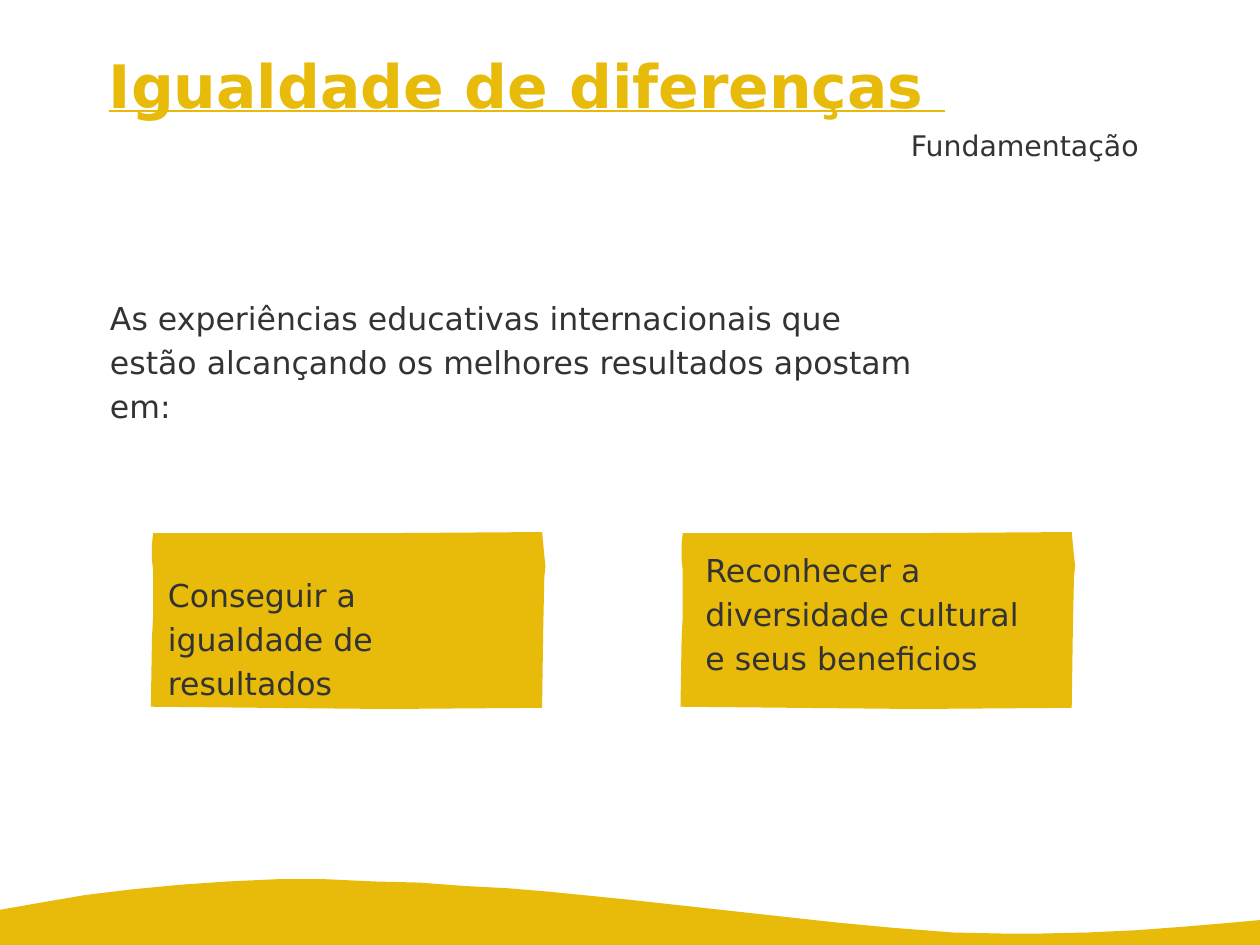
from dataclasses import dataclass

import pptx
import pptx.dml.color
import pptx.enum.text
import pptx.util
from pptx.util import Inches

ALIGN = pptx.enum.text.PP_ALIGN


@dataclass(frozen=True)
class Theme:
    font: str = "DejaVu Sans"
    gold: str = "E8BA0A"
    ink: str = "333333"
    title_size: int = 38
    body_size: int = 20
    label_size: int = 18
    body_spacing: float = 1.17


THEME = Theme()

# Outlines in hundredths of an inch
CARD = [(2, 1), (1, 11), (1, 25), (2, 33), (2, 74), (1, 94), (0, 154),
        (207, 156), (345, 155), (346, 86), (347, 39), (348, 30),
        (347, 21), (345, 0), (203, 1)]
WAVE = [(0, 27), (34, 21), (75, 14), (116, 9), (158, 5), (201, 2), (244, 0),
        (287, 0), (330, 2), (370, 3), (410, 6), (448, 8), (484, 11),
        (554, 18), (736, 38), (789, 43), (815, 45), (840, 47), (889, 48),
        (913, 48), (959, 47), (1002, 45), (1042, 42), (1078, 39),
        (1111, 36), (1111, 58), (0, 58)]


def write(frame, text, *, size=THEME.body_size, color=THEME.ink, bold=False,
          underline=False, align=ALIGN.LEFT, spacing=None, inset=0):
    """Fill a text frame with one formatted paragraph."""
    frame.word_wrap = True
    frame.auto_size = pptx.enum.text.MSO_AUTO_SIZE.NONE
    frame.vertical_anchor = pptx.enum.text.MSO_ANCHOR.TOP
    frame.margin_left = frame.margin_right = Inches(inset)
    frame.margin_top = frame.margin_bottom = Inches(inset / 2)
    paragraph = frame.paragraphs[0]
    paragraph.alignment = align
    paragraph.line_spacing = spacing
    run = paragraph.add_run()
    run.text = text
    run.font.name = THEME.font
    run.font.size = pptx.util.Pt(size)
    run.font.bold = bold
    run.font.underline = underline
    run.font.color.rgb = pptx.dml.color.RGBColor.from_string(color)


def add_text(slide, left, top, width, height, text, **style):
    box = slide.shapes.add_textbox(Inches(left), Inches(top),
                                   Inches(width), Inches(height))
    write(box.text_frame, text, **style)


def add_outline(slide, points, left, top):
    """Draw a gold freeform whose points are relative to left, top."""
    builder = slide.shapes.build_freeform(*points[0], scale=Inches(0.01))
    builder.add_line_segments(points[1:], close=True)
    outline = builder.convert_to_shape(Inches(left), Inches(top))
    outline.shadow.inherit = False
    outline.fill.solid()
    outline.fill.fore_color.rgb = pptx.dml.color.RGBColor.from_string(THEME.gold)
    outline.line.fill.background()


def add_title(slide, text):
    title = slide.shapes.title
    title.left, title.top = Inches(0.96), Inches(0.45)
    title.width, title.height = Inches(9.19), Inches(0.88)
    write(title.text_frame, text, size=THEME.title_size, color=THEME.gold,
          bold=True, underline=True, spacing=pptx.util.Pt(44.1))


def main():
    deck = pptx.Presentation()
    deck.slide_width, deck.slide_height = Inches(11.11), Inches(8.33)
    slide = deck.slides.add_slide(deck.slide_layouts[5])

    # Heading
    add_title(slide, "Igualdade de diferenças ")
    add_text(slide, 6.31, 1.08, 3.83, 0.4, "Fundamentação",
             size=THEME.label_size, align=ALIGN.RIGHT, inset=0.1)

    # Introduction
    add_text(slide, 0.97, 2.58, 7.2, 1.17,
             "As experiências educativas internacionais que estão alcançando "
             "os melhores resultados apostam em:", spacing=THEME.body_spacing)

    # Two goals on gold cards
    goals = [
        (1.33, 1.48, 5.02, "Conseguir a igualdade de resultados"),
        (6, 6.22, 4.8, "Reconhecer a diversidade cultural e seus beneficios"),
    ]
    for card_left, text_left, text_top, goal in goals:
        add_outline(slide, CARD, card_left, 4.69)
        add_text(slide, text_left, text_top, 2.9, 1.17, goal,
                 spacing=THEME.body_spacing)

    # Wave along the bottom edge
    add_outline(slide, WAVE, 0, 7.75)

    deck.save("out.pptx")


if __name__ == "__main__":
    main()
